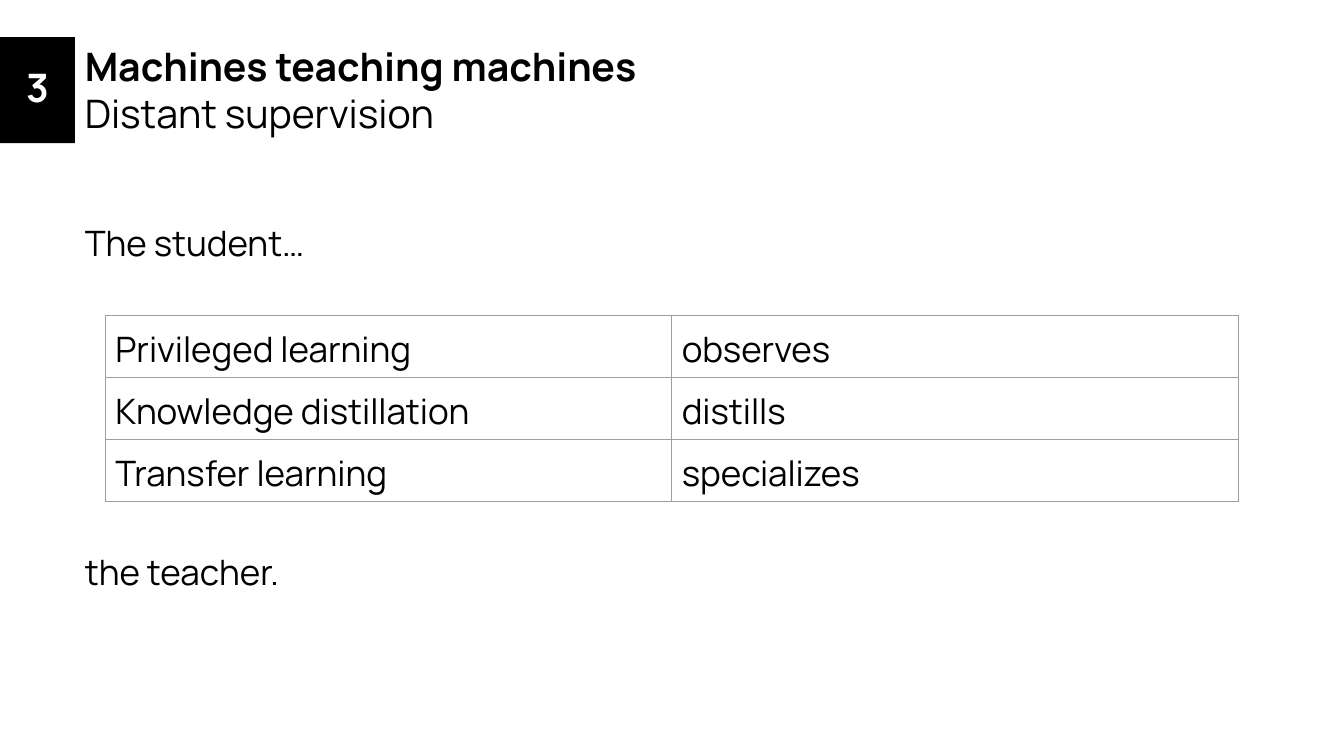
"""Build the slide on distant supervision."""
from lxml import etree
from pptx import Presentation
from pptx.dml.color import RGBColor
from pptx.enum.shapes import MSO_SHAPE
from pptx.enum.text import MSO_ANCHOR, PP_ALIGN
from pptx.oxml.ns import qn
from pptx.util import Pt

RECT = MSO_SHAPE.RECTANGLE
MID, TOP = MSO_ANCHOR.MIDDLE, MSO_ANCHOR.TOP
LEFT, MIDDLE = PP_ALIGN.LEFT, PP_ALIGN.CENTER
HUES = {"ink": "000000", "paper": "FFFFFF", "rule": "9E9E9E"}
FONT = "Manrope"


def write(frame, text, size=25, hue="ink", bold=(), align=LEFT, anchor=TOP, pad=7.2, gap=None):
    frame.word_wrap = True
    frame.vertical_anchor = anchor
    frame.margin_left = frame.margin_right = Pt(7.2)
    frame.margin_top = frame.margin_bottom = Pt(pad)
    for i, line in enumerate(text.split("\n")):
        para = frame.paragraphs[0] if i == 0 else frame.add_paragraph()
        para.alignment = align
        para.line_spacing = gap
        run = para.add_run()
        run.text = line
        run.font.name = FONT
        run.font.size = Pt(size)
        run.font.bold = i in bold
        run.font.color.rgb = RGBColor.from_string(HUES[hue])


def border(cell):
    props = cell._tc.get_or_add_tcPr()
    for n, side in enumerate(("lnL", "lnR", "lnT", "lnB")):
        line = etree.Element(qn("a:" + side), w=str(Pt(0.75)))
        fill = etree.SubElement(line, qn("a:solidFill"))
        etree.SubElement(fill, qn("a:srgbClr"), val=HUES["rule"])
        props.insert(n, line)


deck = Presentation()
deck.slide_width, deck.slide_height = Pt(960), Pt(540)
slide = deck.slides.add_slide(deck.slide_layouts[6])
shapes = slide.shapes

title = shapes.add_textbox(Pt(53.5), Pt(26.6), Pt(772.5), Pt(75))
write(title.text_frame, "Machines teaching machines\nDistant supervision", size=28, bold=(0,), pad=3.6)

badge = shapes.add_shape(RECT, Pt(0), Pt(26.6), Pt(53.5), Pt(75.6))
badge.shadow.inherit = False
badge.fill.solid()
badge.fill.fore_color.rgb = RGBColor.from_string(HUES["ink"])
badge.line.fill.background()
write(badge.text_frame, "3", size=28, hue="paper", bold=(0,), align=MIDDLE, anchor=MID, pad=3.6, gap=0.9)

for top, text in ((151.2, "The student…"), (385.9, "the teacher.")):
    box = shapes.add_textbox(Pt(53.5), Pt(top), Pt(833.8), Pt(55.4))
    write(box.text_frame, text)

pairs = [
    ("Privileged learning", "observes"),
    ("Knowledge distillation", "distills"),
    ("Transfer learning", "specializes"),
]
high = 44.3
frame = shapes.add_table(len(pairs), 2, Pt(75.2), Pt(225), Pt(809.2), Pt(high * len(pairs)))
table = frame.table
table.first_row = table.horz_banding = False
for r, pair in enumerate(pairs):
    table.rows[r].height = Pt(high)
    for c, text in enumerate(pair):
        cell = table.cell(r, c)
        cell.fill.background()
        border(cell)
        write(cell.text_frame, text)
        cell.margin_left = cell.margin_right = Pt(7.2)
        cell.margin_top = cell.margin_bottom = Pt(7.2)

deck.save("out.pptx")
